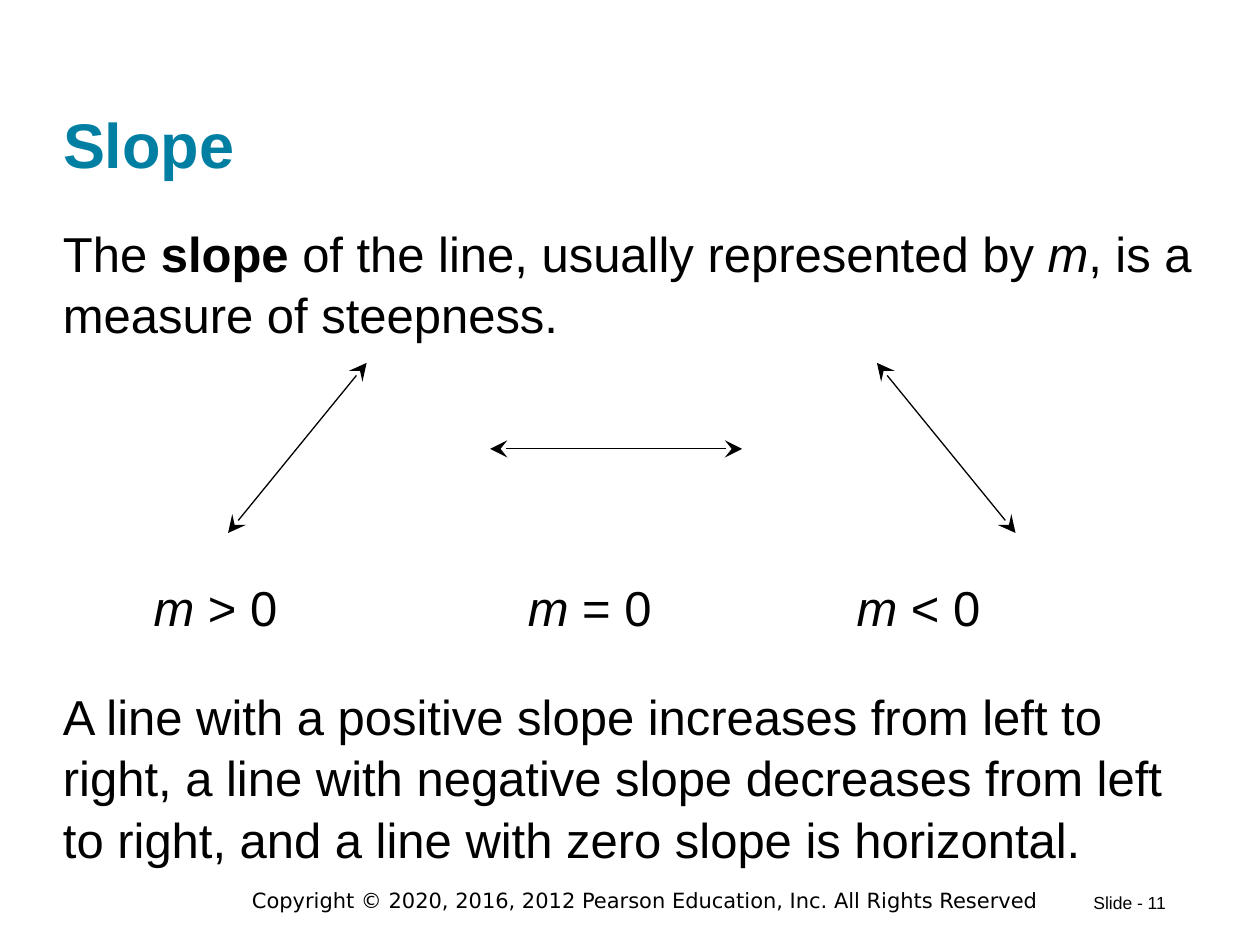
from dataclasses import dataclass

from lxml import etree
from pptx import Presentation
from pptx import util as u
from pptx.dml.color import RGBColor
from pptx.enum import shapes, text
from pptx.oxml import ns

WIDTH, HEIGHT = u.Inches(10), u.Inches(7.5)
COLORS = {"title": "007FA3", "text": "000000"}
MARGIN, CONTENT = 0.05, 0.9  # shares of the slide width
LABEL_TOP, LABEL_HEIGHT = 0.601, 0.076
LINE_SPACING = 1.05


@dataclass
class Run:
    words: str
    bold: bool = False
    italic: bool = False


@dataclass
class Box:
    """Position and size as shares of the slide."""
    left: float
    top: float
    width: float
    height: float

    def lengths(self) -> tuple:
        return (u.Emu(round(self.left * WIDTH)), u.Emu(round(self.top * HEIGHT)),
                u.Emu(round(self.width * WIDTH)), u.Emu(round(self.height * HEIGHT)))


@dataclass
class SlopeCase:
    """A sample line between two points, with the sign of its slope."""
    start: tuple
    end: tuple
    label_left: float
    label_width: float
    relation: str


CASES = [
    SlopeCase((0.291, 0.384), (0.181, 0.564), 0.112, 0.129, " > 0"),
    SlopeCase((0.389, 0.475), (0.589, 0.475), 0.409, 0.125, " = 0"),
    SlopeCase((0.696, 0.384), (0.806, 0.564), 0.67, 0.122, " < 0"),
]


def write_runs(paragraph, runs: list, size: float, color: str = "text",
               font_name: str = "Arial") -> None:
    for item in runs:
        run = paragraph.add_run()
        run.text = item.words
        font = run.font
        font.name, font.size = font_name, u.Pt(size)
        font.bold, font.italic = item.bold, item.italic
        font.color.rgb = RGBColor.from_string(COLORS[color])


def remove_insets(frame) -> None:
    frame.margin_left = frame.margin_right = 0
    frame.margin_top = frame.margin_bottom = 0


def add_text(parent, box: Box, runs: list, size: float = 28, inset: bool = True,
             wrap: bool = True, spacing: float = 1.0, centered: bool = False,
             font_name: str = "Arial") -> None:
    frame = parent.add_textbox(*box.lengths()).text_frame
    frame.word_wrap = wrap
    if not inset:
        remove_insets(frame)
    paragraph = frame.paragraphs[0]
    paragraph.line_spacing = spacing
    paragraph.alignment = text.PP_ALIGN.CENTER if centered else text.PP_ALIGN.LEFT
    write_runs(paragraph, runs, size, font_name=font_name)


def add_double_arrow(parent, start: tuple, end: tuple) -> None:
    points = [u.Emu(round(share * length)) for point in (start, end)
              for share, length in zip(point, (WIDTH, HEIGHT))]
    connector = parent.add_connector(shapes.MSO_CONNECTOR.STRAIGHT, *points)
    connector.line.width = u.Pt(0.75)
    connector.line.color.rgb = RGBColor.from_string(COLORS["text"])
    properties = connector.line._get_or_add_ln()
    for tag in ("a:headEnd", "a:tailEnd"):
        etree.SubElement(properties, ns.qn(tag), type="stealth", w="lg", len="lg")
    etree.SubElement(connector._element.spPr, ns.qn("a:effectLst"))


def add_slope_case(slide, case: SlopeCase) -> None:
    group = slide.shapes.add_group_shape().shapes
    add_double_arrow(group, case.start, case.end)
    add_text(group, Box(case.label_left, LABEL_TOP, case.label_width, LABEL_HEIGHT),
             [Run("m", italic=True), Run(case.relation)], spacing=LINE_SPACING)


def set_title(slide, words: str) -> None:
    title = slide.shapes.title
    title.left, title.top, title.width, title.height = Box(
        MARGIN, 0.032, CONTENT, 0.16).lengths()
    frame = title.text_frame
    remove_insets(frame)
    frame.vertical_anchor = text.MSO_ANCHOR.BOTTOM
    paragraph = frame.paragraphs[0]
    paragraph.alignment = text.PP_ALIGN.LEFT
    write_runs(paragraph, [Run(words, bold=True)], 36, "title")


def main() -> None:
    presentation = Presentation()
    presentation.slide_width, presentation.slide_height = WIDTH, HEIGHT
    slide = presentation.slides.add_slide(presentation.slide_layouts[5])

    set_title(slide, "Slope")
    add_text(slide.shapes, Box(MARGIN, 0.233, CONTENT, 0.113),
             [Run("The "), Run("slope ", bold=True),
              Run("of the line, usually represented by "), Run("m", italic=True),
              Run(", is a measure of steepness.")],
             inset=False, spacing=LINE_SPACING)
    for case in CASES:
        add_slope_case(slide, case)
    add_text(slide.shapes, Box(MARGIN, 0.723, CONTENT, 0.189),
             [Run("A line with a positive slope increases from left to right, "
                  "a line with negative slope decreases from left to right, "
                  "and a line with zero slope is horizontal.")],
             inset=False, spacing=LINE_SPACING)

    add_text(slide.shapes, Box(0.183, 0.933, 0.658, 0.04),
             [Run("Copyright © 2020, 2016, 2012 Pearson Education, Inc. "
                  "All Rights Reserved")],
             size=12, centered=True, font_name="DejaVu Sans")
    add_text(slide.shapes, Box(0.858, 0.937, 0.081, 0.036), [Run("Slide - 11")],
             size=10, wrap=False)
    presentation.save("out.pptx")


if __name__ == "__main__":
    main()
